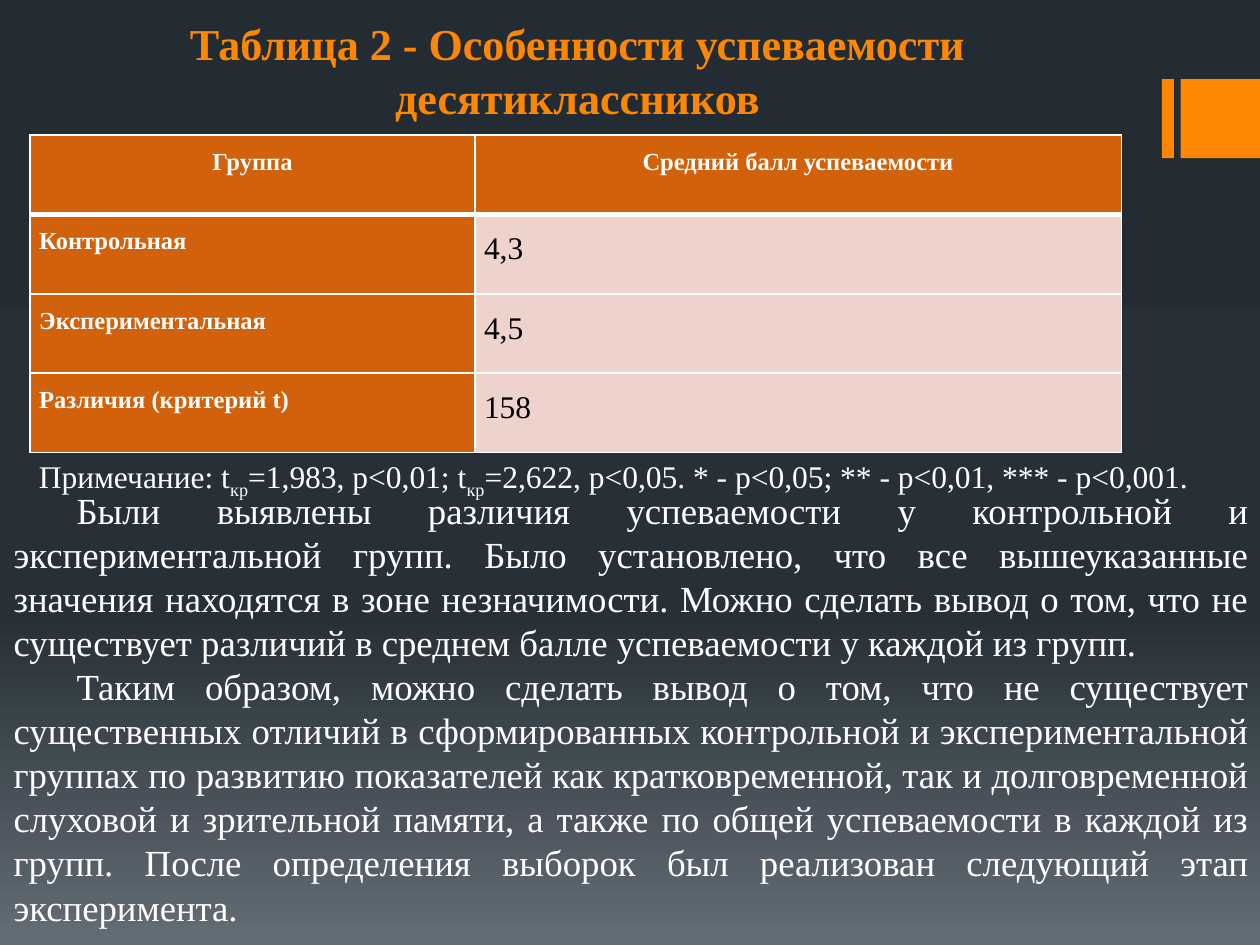
from lxml import etree
from copy import deepcopy
from pptx import Presentation
from pptx.dml.color import RGBColor
from pptx.enum.shapes import MSO_SHAPE
from pptx.enum.text import PP_ALIGN
from pptx.oxml.ns import qn
from pptx.util import Pt

RECT = MSO_SHAPE.RECTANGLE
CENTER, LEFT, JUSTIFY = PP_ALIGN.CENTER, PP_ALIGN.LEFT, PP_ALIGN.JUSTIFY
FONT = "Times New Roman"
COLORS = {
    "accent": "FF8600",
    "label": "D2610C",
    "value": "EED2CC",
    "white": "FFFFFF",
    "black": "000000",
}
BACKDROP = [(0, "242C33"), (0.65, "273037"), (1, "636D76")]


def add_run(paragraph, text, size, color, bold=False):
    run = paragraph.add_run()
    run.text = text
    run.font.name = FONT
    run.font.size = Pt(size)
    run.font.bold = bold
    run.font.color.rgb = RGBColor.from_string(COLORS[color])
    return run


def add_border(cell, side, width):
    line = etree.SubElement(cell._tc.get_or_add_tcPr(), qn(f"a:{side}"), w=str(Pt(width)))
    fill = etree.SubElement(line, qn("a:solidFill"))
    etree.SubElement(fill, qn("a:srgbClr"), val=COLORS["white"])


prs = Presentation()
prs.slide_width, prs.slide_height = Pt(720), Pt(540)
slide = prs.slides.add_slide(prs.slide_layouts[6])

backdrop = slide.background.fill
backdrop.gradient()
backdrop.gradient_angle = 270
stop_list = slide._element.find(".//" + qn("a:gsLst"))
stop_list.append(deepcopy(stop_list[-1]))
for stop, (position, color) in zip(backdrop.gradient_stops, BACKDROP):
    stop.position = position
    stop.color.rgb = RGBColor.from_string(color)

for left, width in [(664, 6.8), (674.7, 45.3)]:
    accent = slide.shapes.add_shape(RECT, Pt(left), Pt(45.2), Pt(width), Pt(45.2))
    accent.shadow.inherit = False
    accent.fill.solid()
    accent.fill.fore_color.rgb = RGBColor.from_string(COLORS["accent"])
    accent.line.fill.background()

title = slide.shapes.add_textbox(Pt(0), Pt(0), Pt(660), Pt(134)).text_frame
title.word_wrap = True
title.margin_top = Pt(8.6)
heading = title.paragraphs[0]
heading.alignment = CENTER
heading.line_spacing = Pt(30.9)
add_run(heading, "Таблица 2 - Особенности успеваемости десятиклассников", 25.2, "accent", True)

note = slide.shapes.add_textbox(Pt(15.1), Pt(257.8), Pt(692), Pt(29)).text_frame
note.word_wrap = True
note_line = note.paragraphs[0]
note_line.alignment = LEFT
for text, is_subscript in [
    ("Примечание: t", False),
    ("кр", True),
    ("=1,983, p<0,01; t", False),
    ("кр", True),
    ("=2,622, p<0,05. * - p<0,05; ** - p<0,01, *** - p<0,001.", False),
]:
    part = add_run(note_line, text, 18, "white")
    if is_subscript:
        part.font._element.set("baseline", "-25000")

grades = [
    ("Группа", "Средний балл успеваемости"),
    ("Контрольная", "4,3"),
    ("Экспериментальная", "4,5"),
    ("Различия (критерий t)", "158"),
]
table = slide.shapes.add_table(4, 2, Pt(17.2), Pt(77.1), Pt(623.6), Pt(181.6)).table
table.columns[0].width, table.columns[1].width = Pt(254.2), Pt(369.4)
for r, row in enumerate(grades):
    table.rows[r].height = Pt(45.4)
    for c, text in enumerate(row):
        is_label = r == 0 or c == 0
        cell = table.cell(r, c)
        cell.margin_left = cell.margin_right = Pt(5.2)
        cell.margin_top = cell.margin_bottom = Pt(0)
        entry = cell.text_frame.paragraphs[0]
        entry.alignment = CENTER if r == 0 else JUSTIFY
        entry.line_spacing = 1.5
        entry.space_after = Pt(8)
        add_run(entry, text, 14 if is_label else 18, "white" if is_label else "black", is_label)
        add_border(cell, "lnL", 1)
        add_border(cell, "lnR", 1)
        add_border(cell, "lnT", 3 if r == 1 else 1)
        add_border(cell, "lnB", 3 if r == 0 else 1)
        cell.fill.solid()
        cell.fill.fore_color.rgb = RGBColor.from_string(COLORS["label" if is_label else "value"])

conclusions = [
    "Были выявлены различия успеваемости у контрольной и экспериментальной групп. "
    "Было установлено, что все вышеуказанные значения находятся в зоне незначимости. "
    "Можно сделать вывод о том, что не существует различий в среднем балле "
    "успеваемости у каждой из групп.",
    "Таким образом, можно сделать вывод о том, что не существует существенных отличий "
    "в сформированных контрольной и экспериментальной группах по развитию показателей "
    "как кратковременной, так и долговременной слуховой и зрительной памяти, а также "
    "по общей успеваемости в каждой из групп. После определения выборок был реализован "
    "следующий этап эксперимента.",
]
summary = slide.shapes.add_textbox(Pt(0.7), Pt(275), Pt(720), Pt(262)).text_frame
summary.word_wrap = True
for i, text in enumerate(conclusions):
    conclusion = summary.add_paragraph() if i else summary.paragraphs[0]
    conclusion.alignment = JUSTIFY
    conclusion._p.get_or_add_pPr().set("indent", str(Pt(36)))
    add_run(conclusion, text, 21, "white")

prs.save("out.pptx")
